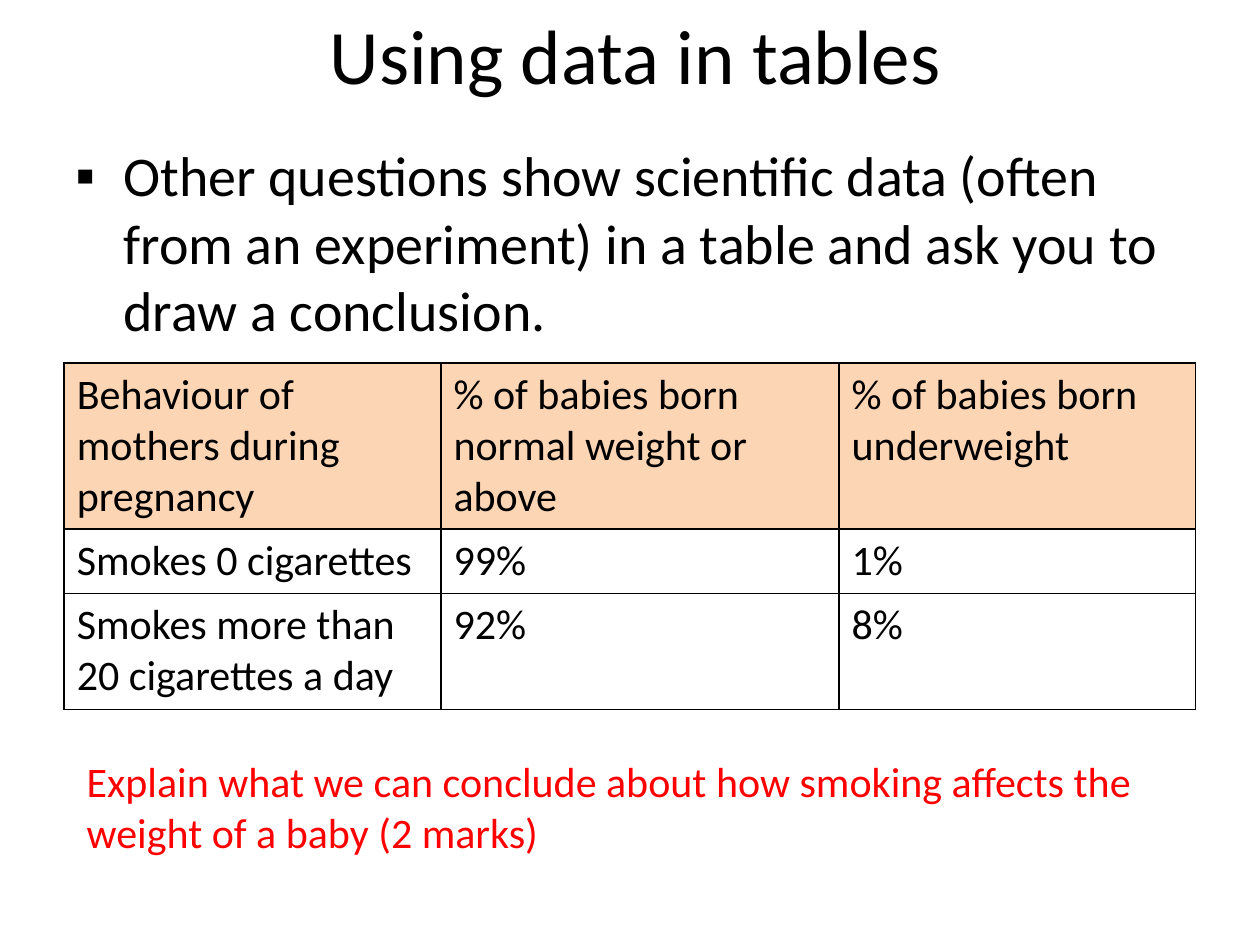
from dataclasses import dataclass

from lxml.etree import SubElement as Sub
from pptx import Presentation
from pptx.dml.color import RGBColor as Rgb
from pptx.enum.text import MSO_ANCHOR as Anchor, PP_ALIGN as Align
from pptx.oxml.ns import qn
from pptx.util import Inches, Pt


@dataclass(frozen=True)
class Theme:
    face: str = "Calibri"
    ink: str = "000000"
    alert: str = "FF0000"
    head: str = "FCD5B5"
    title: int = 44
    body: int = 32
    small: int = 24
    rule: int = 1


THEME = Theme()
COLS = (2.99, 3.16, 2.83)
ROWS = (1.32, 0.51, 0.92)
DATA = (
    ("Behaviour of mothers during pregnancy",
     "% of babies born normal weight or above",
     "% of babies born underweight"),
    ("Smokes 0 cigarettes", "99%", "1%"),
    ("Smokes more than 20 cigarettes a day", "92%", "8%"),
)


def apply(item, form):
    for name, value in form.items():
        setattr(item, name, value)


def write(frame, text, size, color=THEME.ink, **form):
    para = frame.paragraphs[0]
    apply(para, form)
    run = para.add_run()
    run.text = text
    apply(run.font, {"name": THEME.face, "size": Pt(size)})
    run.font.color.rgb = Rgb.from_string(color)
    return para


def add_text(slide, box, text, size, color=THEME.ink, anchor=Anchor.TOP, **form):
    frame = slide.shapes.add_textbox(*map(Inches, box)).text_frame
    apply(frame, {"word_wrap": True, "vertical_anchor": anchor})
    return write(frame, text, size, color, **form)


def add_bullet(para, mark, indent):
    props = para._p.get_or_add_pPr()
    props.set("marL", str(Inches(indent)))
    props.set("indent", str(-Inches(indent)))
    Sub(props, qn("a:buFont"), typeface="Arial")
    Sub(props, qn("a:buChar"), char=mark)


def add_edges(cell):
    props = cell._tc.get_or_add_tcPr()
    for side in "LRTB":
        line = Sub(props, qn(f"a:ln{side}"), w=str(Pt(THEME.rule)))
        fill = Sub(line, qn("a:solidFill"))
        Sub(fill, qn("a:srgbClr"), val=THEME.ink)


def add_grid(slide, left, top):
    box = map(Inches, (left, top, sum(COLS), sum(ROWS)))
    table = slide.shapes.add_table(len(ROWS), len(COLS), *box).table
    apply(table, {"first_row": False, "horz_banding": False})
    for col, width in zip(table.columns, COLS):
        col.width = Inches(width)
    for i, (row, height) in enumerate(zip(table.rows, ROWS)):
        row.height = Inches(height)
        for cell, text in zip(row.cells, DATA[i]):
            write(cell.text_frame, text, THEME.small)
            add_edges(cell)
            if i == 0:
                cell.fill.solid()
                cell.fill.fore_color.rgb = Rgb.from_string(THEME.head)
            else:
                cell.fill.background()


def main():
    deck = Presentation()
    apply(deck, {"slide_width": Inches(10), "slide_height": Inches(7.5)})
    slide = deck.slides.add_slide(deck.slide_layouts[6])
    add_text(slide, (0.51, 0, 9.07, 0.85), "Using data in tables",
             THEME.title, anchor=Anchor.MIDDLE, alignment=Align.CENTER)
    para = add_text(
        slide, (0.5, 1.07, 9.15, 5.63),
        "Other questions show scientific data (often from an experiment) "
        "in a table and ask you to draw a conclusion.",
        THEME.body, space_before=Pt(6.4))
    add_bullet(para, "▪", 0.38)
    add_grid(slide, 0.51, 2.88)
    add_text(slide, (0.59, 5.95, 8.9, 0.91),
             "Explain what we can conclude about how smoking affects "
             "the weight of a baby (2 marks)", THEME.small, THEME.alert)
    deck.save("out.pptx")


if __name__ == "__main__":
    main()
